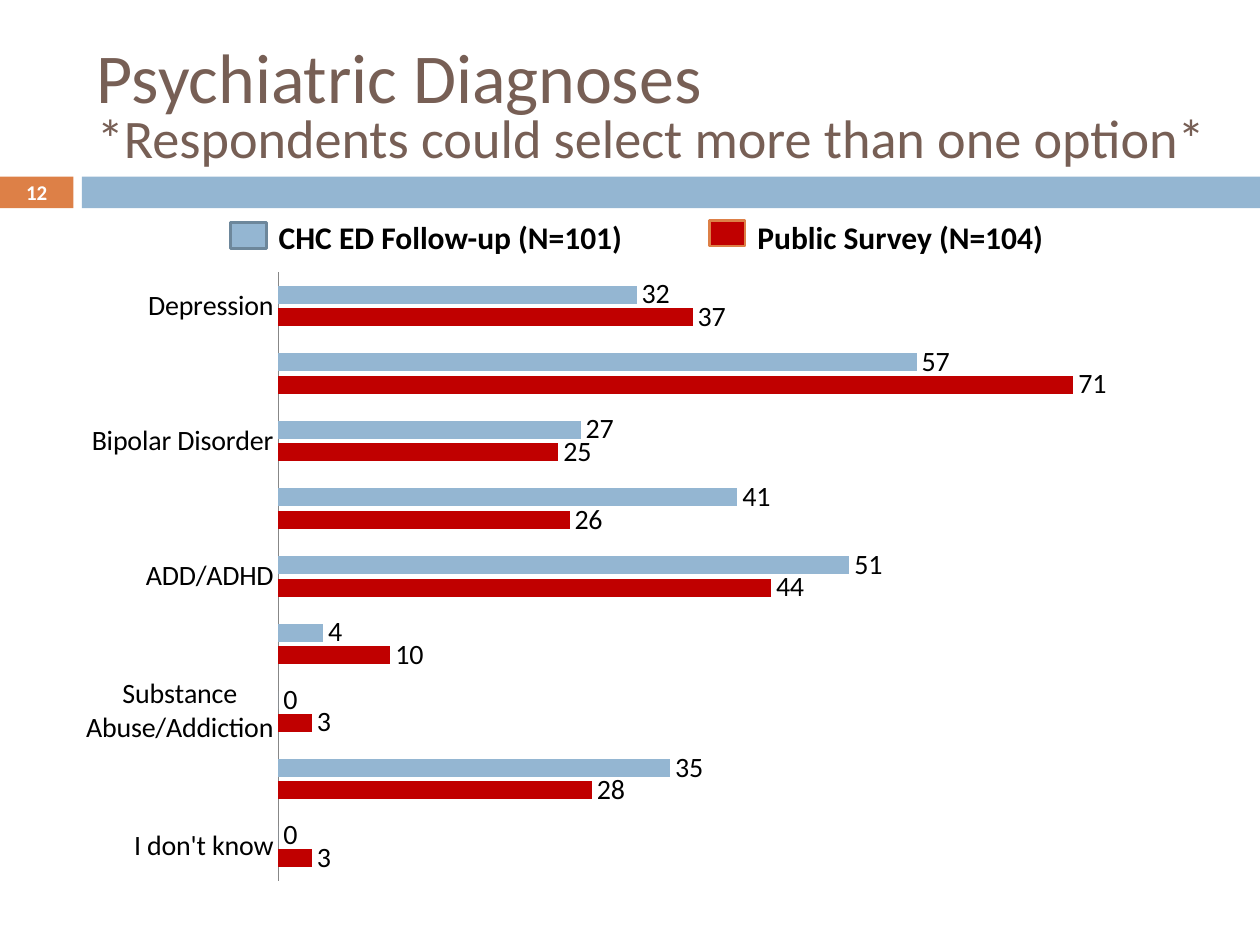
from dataclasses import dataclass

from lxml.etree import SubElement
from pptx import Presentation
from pptx.chart.data import CategoryChartData
from pptx.dml.color import RGBColor
from pptx.enum.chart import XL_CHART_TYPE, XL_LABEL_POSITION, XL_TICK_MARK
from pptx.enum.shapes import MSO_SHAPE
from pptx.enum.text import MSO_ANCHOR, PP_ALIGN
from pptx.oxml.ns import qn
from pptx.util import Cm, Pt


@dataclass(frozen=True)
class Theme:
    font: str = "Calibri"
    brown: RGBColor = RGBColor(0x77, 0x5F, 0x55)
    orange: RGBColor = RGBColor(0xDD, 0x80, 0x47)
    blue: RGBColor = RGBColor(0x94, 0xB6, 0xD2)
    slate: RGBColor = RGBColor(0x6D, 0x87, 0x9B)
    red: RGBColor = RGBColor(0xC0, 0x00, 0x00)
    grey: RGBColor = RGBColor(0x87, 0x87, 0x87)
    black: RGBColor = RGBColor(0, 0, 0)
    white: RGBColor = RGBColor(0xFF, 0xFF, 0xFF)
    title: Pt = Pt(40)
    subtitle: Pt = Pt(31)
    legend: Pt = Pt(18)
    label: Pt = Pt(16)
    number: Pt = Pt(12)


THEME = Theme()
FOLLOW_UP = "CHC ED Follow-up (N=101)"
SURVEY = "Public Survey (N=104)"
DIAGNOSES = [
    ("Depression", 32, 37),
    ("", 57, 71),
    ("Bipolar Disorder", 27, 25),
    ("", 41, 26),
    ("ADD/ADHD", 51, 44),
    ("", 4, 10),
    ("Substance Abuse/Addiction", 0, 3),
    ("", 35, 28),
    ("I don't know", 0, 3),
]


def set_font(font, size, color, bold=False):
    font.name = THEME.font
    font.size = size
    font.bold = bold
    font.color.rgb = color


def add_block(page, left, top, width, height, fill, line=None):
    block = page.shapes.add_shape(
        MSO_SHAPE.RECTANGLE, Cm(left), Cm(top), Cm(width), Cm(height))
    block.shadow.inherit = False
    block.fill.solid()
    block.fill.fore_color.rgb = fill
    if line is None:
        block.line.fill.background()
    else:
        block.line.color.rgb = line
        block.line.width = Pt(1.5)


def add_title(page, heading, note):
    title = page.shapes.title
    title.left, title.top, title.width, title.height = (
        Cm(1.7), Cm(0.84), Cm(23.7), Cm(2.74))
    frame = title.text_frame
    frame.vertical_anchor = MSO_ANCHOR.MIDDLE
    para = frame.paragraphs[0]
    para.alignment = PP_ALIGN.LEFT
    para.line_spacing = 0.8
    set_font(para.font, THEME.title, THEME.brown)
    para.add_run().text = heading
    para.add_line_break()
    span = para.add_run()
    span.text = note
    span.font.size = THEME.subtitle


def add_text(page, text, left, top, width, height, size, color,
             align=PP_ALIGN.LEFT, anchor=MSO_ANCHOR.TOP):
    box = page.shapes.add_textbox(Cm(left), Cm(top), Cm(width), Cm(height))
    frame = box.text_frame
    frame.word_wrap = True
    frame.vertical_anchor = anchor
    para = frame.paragraphs[0]
    para.text = text
    para.alignment = align
    set_font(para.font, size, color, bold=True)


def add_legend_entry(page, text, left, key_top, fill, line):
    key_width = 0.72
    add_block(page, left, key_top, key_width, 0.52, fill, line)
    add_text(page, text, left + key_width, 4.27, 9.37, 1.02,
             THEME.legend, THEME.black)


def fix_plot_area(chart, **fractions):
    plot_area = chart.plots[0]._element.getparent()
    layout = plot_area.find(qn("c:layout"))
    if layout is None:
        layout = SubElement(plot_area, qn("c:layout"))
        plot_area.insert(0, layout)
    manual = SubElement(layout, qn("c:manualLayout"))
    settings = {"layoutTarget": "inner", "xMode": "edge", "yMode": "edge", **fractions}
    for name, value in settings.items():
        SubElement(manual, qn(f"c:{name}")).set("val", str(value))


def add_diagnosis_chart(page):
    names, follow_up, survey = zip(*DIAGNOSES)
    data = CategoryChartData()
    data.categories = names
    data.add_series(FOLLOW_UP, follow_up)
    data.add_series(SURVEY, survey)
    chart = page.shapes.add_chart(
        XL_CHART_TYPE.BAR_CLUSTERED, Cm(1.27), Cm(5.23), Cm(22.86), Cm(12.78),
        data).chart
    chart.has_title = False
    chart.has_legend = False
    set_font(chart.font, THEME.label, THEME.black)

    categories = chart.category_axis
    categories.reverse_order = True
    categories.major_tick_mark = XL_TICK_MARK.NONE
    categories.format.line.color.rgb = THEME.grey
    categories.format.line.width = Pt(0.75)
    set_font(categories.tick_labels.font, THEME.label, THEME.black)
    values = chart.value_axis
    values.minimum_scale = 0
    values.maximum_scale = 80
    values.has_major_gridlines = False
    values.visible = False

    plot = chart.plots[0]
    plot.vary_by_categories = False
    plot.gap_width = 150
    plot.overlap = -25
    for series, color in zip(plot.series, (THEME.blue, THEME.red)):
        series.format.fill.solid()
        series.format.fill.fore_color.rgb = color
        labels = series.data_labels
        labels.show_value = True
        labels.position = XL_LABEL_POSITION.OUTSIDE_END
        set_font(labels.font, THEME.label, THEME.black)
    fix_plot_area(chart, x=0.19, y=0.02, w=0.79, h=0.96)


def main():
    deck = Presentation()
    deck.slide_width, deck.slide_height = Cm(25.4), Cm(19.05)
    page = deck.slides.add_slide(deck.slide_layouts[5])
    add_block(page, 0, 3.56, 1.48, 0.64, THEME.orange)
    add_block(page, 1.65, 3.56, 23.75, 0.64, THEME.blue)
    add_title(page, "Psychiatric Diagnoses",
              "*Respondents could select more than one option*")
    add_text(page, "12", 0, 3.54, 1.48, 0.68, THEME.number, THEME.white,
             PP_ALIGN.CENTER, MSO_ANCHOR.MIDDLE)
    add_legend_entry(page, FOLLOW_UP, 4.65, 4.49, THEME.blue, THEME.slate)
    add_legend_entry(page, SURVEY, 14.3, 4.44, THEME.red, THEME.orange)
    add_diagnosis_chart(page)
    deck.save("out.pptx")


if __name__ == "__main__":
    main()
